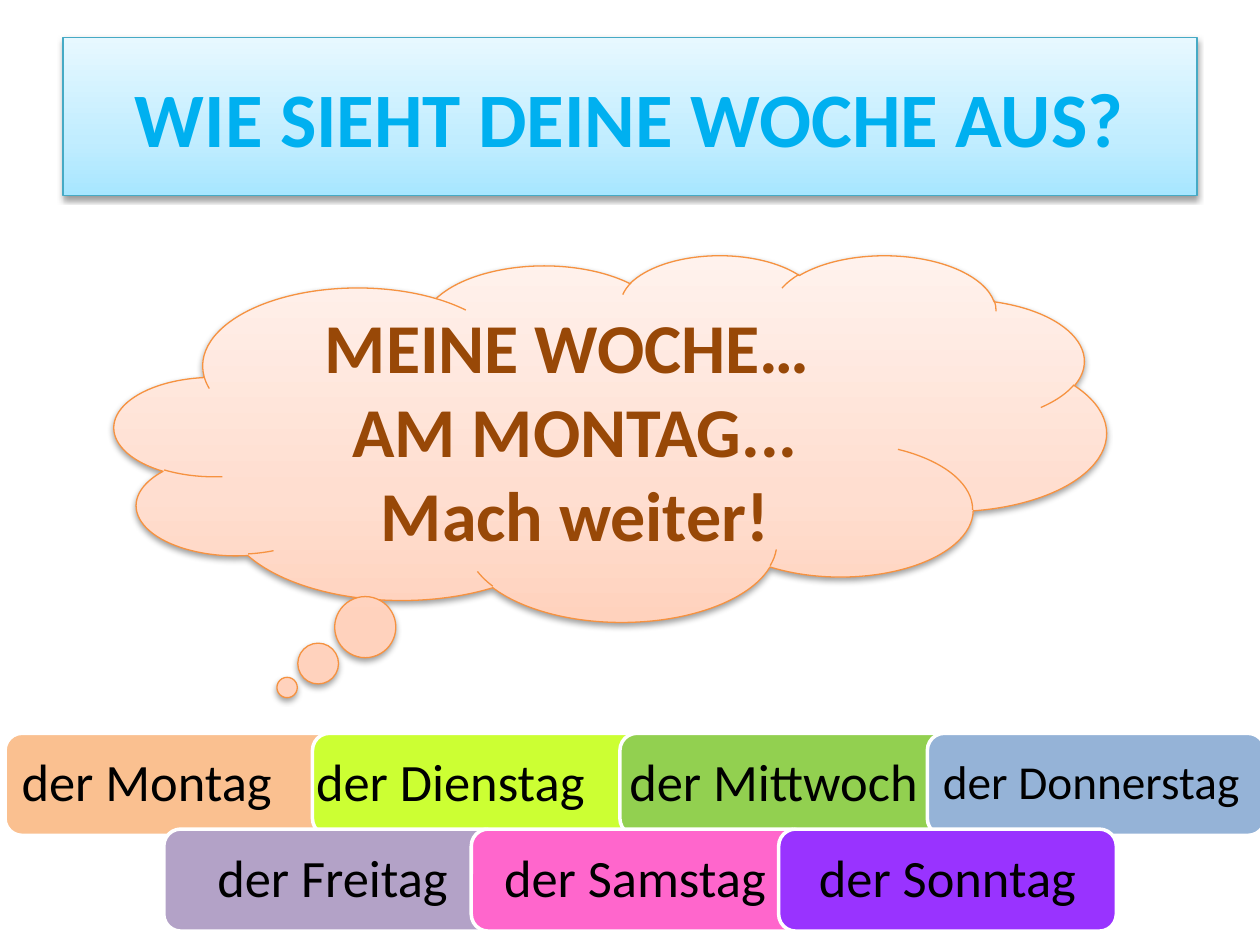
from dataclasses import dataclass

import pptx
import pptx.dml.color
import pptx.enum.shapes
import pptx.enum.text
import pptx.oxml
import pptx.oxml.ns
import pptx.util
from pptx.util import Inches

SHAPES = pptx.enum.shapes.MSO_SHAPE
DRAWING = pptx.oxml.ns.nsdecls("a")
CARD_WIDTH, CARD_HEIGHT, CARD_STEP = 2.68, 0.81, 2.44


@dataclass
class Banner:
    kind: int
    left: float
    top: float
    width: float
    height: float
    stops: tuple[str, str, str]
    outline: str
    ink: str
    size: int
    lines: list[str]


@dataclass
class Day:
    name: str
    fill: str
    text_shift: float = 0.04
    size: int = 30
    right_inset: float = 0.12


@dataclass
class DayRow:
    left: float
    top: float
    days: list[Day]


BANNERS = [
    Banner(SHAPES.RECTANGLE, 0.5, 0.3, 9, 1.25, ("A7E6FF", "C1EDFF", "E7F8FF"),
           "46AAC5", "00B0F0", 44, ["WIE SIEHT DEINE WOCHE AUS?"]),
    Banner(SHAPES.CLOUD_CALLOUT, 0.91, 2.02, 7.87, 2.91, ("FFD2BD", "FFDED0", "FFF2ED"),
           "F69240", "984807", 40, ["MEINE WOCHE… ", "AM MONTAG...", "Mach weiter!"]),
]
DAY_ROWS = [
    DayRow(0.04, 5.82, [
        Day("der Montag", "FAC090", -0.08, right_inset=0.31),
        Day("der Dienstag", "CCFF33", -0.16, right_inset=0.21),
        Day("der Mittwoch", "92D050", -0.08),
        Day("der Donnerstag", "95B3D7", 0, 27),
    ]),
    DayRow(1.3, 6.58, [
        Day("der Freitag", "B3A2C7"),
        Day("der Samstag", "FF66CC", 0),
        Day("der Sonntag", "9933FF"),
    ]),
]


def colour(value: str) -> pptx.dml.color.RGBColor:
    return pptx.dml.color.RGBColor.from_string(value)


def set_outline(shape, value: str, width: float) -> None:
    shape.line.color.rgb = colour(value)
    shape.line.width = pptx.util.Pt(width)


def set_gradient(shape, stops: tuple[str, str, str]) -> None:
    shape.fill.gradient()
    shape.fill.gradient_angle = 90
    stop_list = shape.element.spPr.find(".//" + pptx.oxml.ns.qn("a:gsLst"))
    for stop in list(stop_list):
        stop_list.remove(stop)
    for position, value in zip((0, 35, 100), stops):
        stop_list.append(pptx.oxml.parse_xml(
            f'<a:gs {DRAWING} pos="{position * 1000}"><a:srgbClr val="{value}"/></a:gs>'))


def add_shadow(shape) -> None:
    shape.shadow.inherit = False
    effects = shape.element.spPr.find(pptx.oxml.ns.qn("a:effectLst"))
    effects.append(pptx.oxml.parse_xml(
        f'<a:outerShdw {DRAWING} blurRad="40000" dist="20000" dir="5400000" rotWithShape="0">'
        '<a:srgbClr val="000000"><a:alpha val="38000"/></a:srgbClr></a:outerShdw>'))


def write_lines(shape, lines: list[str], size: int, ink: str,
                bold: bool = False, spacing: float = 1.0) -> None:
    frame = shape.text_frame
    frame.word_wrap = True
    frame.vertical_anchor = pptx.enum.text.MSO_ANCHOR.MIDDLE
    frame.text = "\n".join(lines)
    for para in frame.paragraphs:
        para.alignment = pptx.enum.text.PP_ALIGN.CENTER
        para.line_spacing = spacing
        para.font.name = "Calibri"
        para.font.size = pptx.util.Pt(size)
        para.font.bold = bold
        para.font.color.rgb = colour(ink)


def draw_banner(page, banner: Banner) -> None:
    shape = page.shapes.add_shape(
        banner.kind, Inches(banner.left), Inches(banner.top),
        Inches(banner.width), Inches(banner.height))
    if banner.kind == SHAPES.CLOUD_CALLOUT:
        shape.adjustments[0], shape.adjustments[1] = -0.326, 0.681
    set_gradient(shape, banner.stops)
    set_outline(shape, banner.outline, 0.75)
    add_shadow(shape)
    write_lines(shape, banner.lines, banner.size, banner.ink, bold=True)


def draw_day(page, day: Day, left: float, top: float) -> None:
    group = page.shapes.add_group_shape()
    card = group.shapes.add_shape(
        SHAPES.ROUNDED_RECTANGLE, Inches(left), Inches(top),
        Inches(CARD_WIDTH), Inches(CARD_HEIGHT))
    card.shadow.inherit = False
    card.fill.solid()
    card.fill.fore_color.rgb = colour(day.fill)
    set_outline(card, "FFFFFF", 2)

    box = group.shapes.add_textbox(
        Inches(left + day.text_shift), Inches(top + 0.04),
        Inches(CARD_WIDTH - 0.08), Inches(CARD_HEIGHT - 0.08))
    frame = box.text_frame
    frame.margin_left = Inches(0.12)
    frame.margin_right = Inches(day.right_inset)
    frame.margin_top = frame.margin_bottom = Inches(0.06)
    write_lines(box, [day.name], day.size, "000000", spacing=0.9)


def main() -> None:
    deck = pptx.Presentation()
    deck.slide_width = Inches(10)
    deck.slide_height = Inches(7.5)
    page = deck.slides.add_slide(deck.slide_layouts[6])
    for banner in BANNERS:
        draw_banner(page, banner)
    for row in DAY_ROWS:
        for index, day in enumerate(row.days):
            draw_day(page, day, row.left + index * CARD_STEP, row.top)
    deck.save("out.pptx")


if __name__ == "__main__":
    main()
